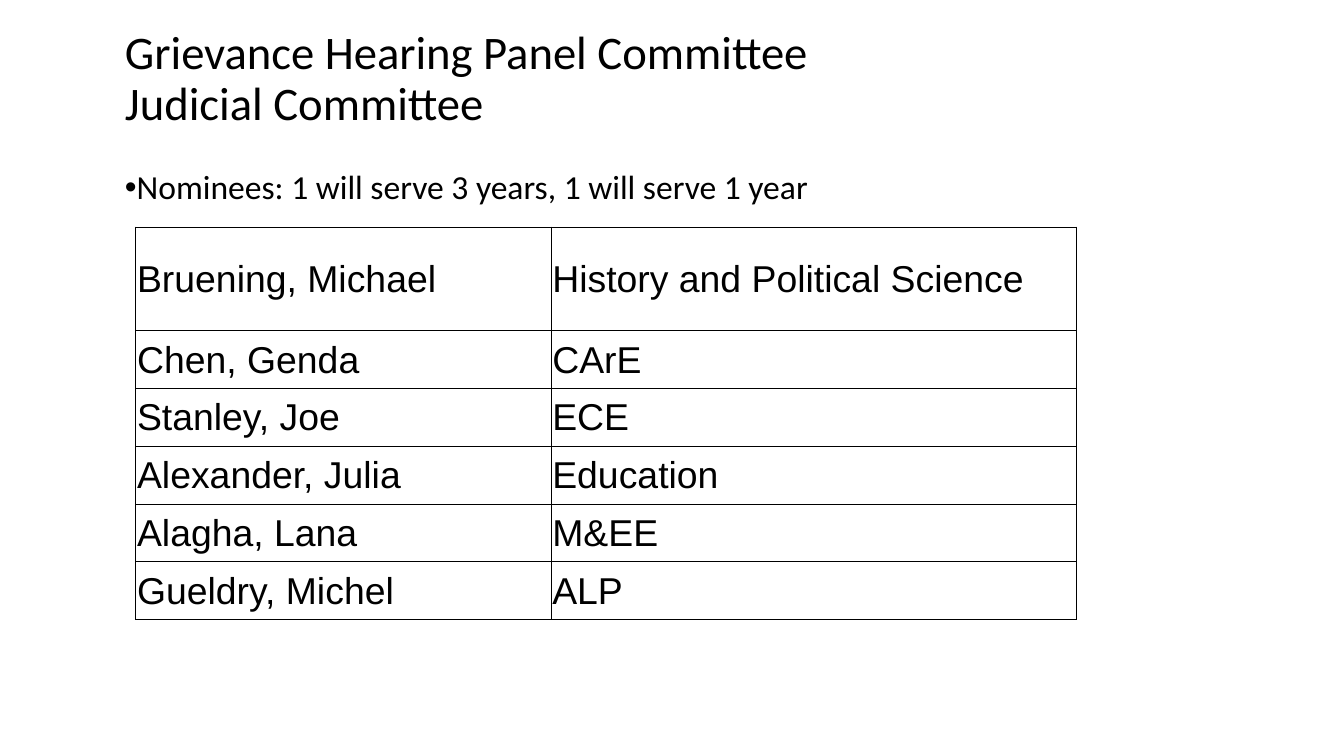
import pptx
import pptx.util
import pptx.dml.color
import pptx.enum.text
import pptx.oxml
import pptx.oxml.ns
from lxml import etree

Inches = pptx.util.Inches
Pt = pptx.util.Pt
Anchor = pptx.enum.text.MSO_ANCHOR

TITLE_LINES = ["Grievance Hearing Panel Committee", "Judicial Committee"]
TERMS = "Nominees: 1 will serve 3 years, 1 will serve 1 year"
NOMINEES = [
    ("Bruening, Michael", "History and Political Science"),
    ("Chen, Genda", "CArE"),
    ("Stanley, Joe", "ECE"),
    ("Alexander, Julia", "Education"),
    ("Alagha, Lana", "M&EE"),
    ("Gueldry, Michel", "ALP"),
]

THEME = {
    "ink": "000000",
    "paper": "FFFFFF",
    "heading_font": "Calibri",
    "table_font": "Arial",
    "title_size": 25,
    "body_size": 18,
    "table_size": 20,
    "border_width": 0.5,
    "line_spacing": 0.9,
}
SLIDE_WIDTH = Inches(10)
SLIDE_HEIGHT = SLIDE_WIDTH * 9 // 16
TITLE_BOX = (0.83, 0.14, 8.35, 0.91)
BODY_BOX = (0.83, 1.2, 8.35, 0.65)
BODY_TOP_INSET = 0.07
TABLE_LEFT, TABLE_TOP = 1.01, 1.69
COLUMN_WIDTHS = (3.09, 3.91)
FIRST_ROW_HEIGHT, ROW_HEIGHT = 0.77, 0.43
CELL_INSET = 0.01


def add_run(paragraph, text, font, size):
    run = paragraph.add_run()
    run.text = text
    run.font.name = font
    run.font.size = Pt(size)
    run.font.color.rgb = pptx.dml.color.RGBColor.from_string(THEME["ink"])


def prepare_placeholder(shape, box, anchor):
    """Place the placeholder and return its left-aligned first paragraph."""
    shape.left, shape.top, shape.width, shape.height = map(Inches, box)
    frame = shape.text_frame
    frame.word_wrap = True
    frame.auto_size = pptx.enum.text.MSO_AUTO_SIZE.NONE
    frame.vertical_anchor = anchor
    paragraph = frame.paragraphs[0]
    paragraph.alignment = pptx.enum.text.PP_ALIGN.LEFT
    paragraph.line_spacing = THEME["line_spacing"]
    return paragraph


def add_bullet(paragraph):
    properties = paragraph._p.get_or_add_pPr()
    properties.set("marL", "0")
    properties.set("indent", str(-Inches(0.25)))
    etree.SubElement(properties, pptx.oxml.ns.qn("a:buChar")).set("char", "•")


def add_borders(cell):
    properties = cell._tc.get_or_add_tcPr()
    for index, side in enumerate(("lnL", "lnR", "lnT", "lnB")):
        properties.insert(index, pptx.oxml.parse_xml(
            f'<a:{side} {pptx.oxml.ns.nsdecls("a")} w="{Pt(THEME["border_width"])}">'
            f'<a:solidFill><a:srgbClr val="{THEME["ink"]}"/></a:solidFill></a:{side}>'))


def fill_cell(cell, text):
    cell.fill.solid()
    cell.fill.fore_color.rgb = pptx.dml.color.RGBColor.from_string(THEME["paper"])
    cell.vertical_anchor = Anchor.MIDDLE
    cell.margin_left = cell.margin_right = cell.margin_top = Inches(CELL_INSET)
    cell.margin_bottom = 0
    add_run(cell.text_frame.paragraphs[0], text, THEME["table_font"], THEME["table_size"])
    add_borders(cell)


def add_nominee_table(slide):
    row_heights = [FIRST_ROW_HEIGHT] + [ROW_HEIGHT] * (len(NOMINEES) - 1)
    table = slide.shapes.add_table(
        len(NOMINEES), len(COLUMN_WIDTHS), Inches(TABLE_LEFT), Inches(TABLE_TOP),
        Inches(sum(COLUMN_WIDTHS)), Inches(sum(row_heights))).table
    table.first_row = table.horz_banding = False
    for column, width in zip(table.columns, COLUMN_WIDTHS):
        column.width = Inches(width)
    for row, height, nominee in zip(table.rows, row_heights, NOMINEES):
        row.height = Inches(height)
        for cell, text in zip(row.cells, nominee):
            fill_cell(cell, text)


def main():
    presentation = pptx.Presentation()
    presentation.slide_width = SLIDE_WIDTH
    presentation.slide_height = SLIDE_HEIGHT
    slide = presentation.slides.add_slide(presentation.slide_layouts[1])

    title = prepare_placeholder(slide.shapes.title, TITLE_BOX, Anchor.MIDDLE)
    for index, line in enumerate(TITLE_LINES):
        if index:
            title.add_line_break()
        add_run(title, line, THEME["heading_font"], THEME["title_size"])

    body = slide.placeholders[1]
    terms = prepare_placeholder(body, BODY_BOX, Anchor.TOP)
    body.text_frame.margin_top = Inches(BODY_TOP_INSET)
    terms.space_before = Pt(10)
    add_bullet(terms)
    add_run(terms, TERMS, THEME["heading_font"], THEME["body_size"])

    add_nominee_table(slide)
    presentation.save("out.pptx")


if __name__ == "__main__":
    main()
